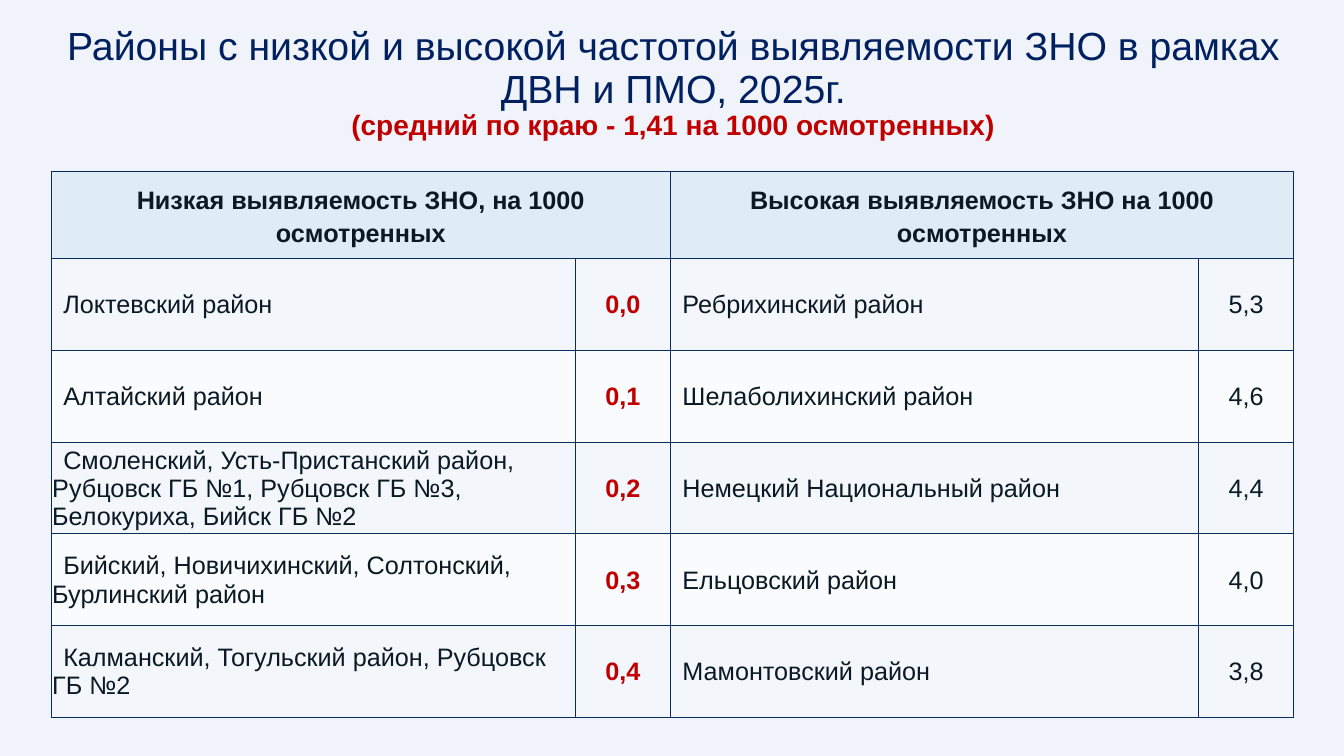
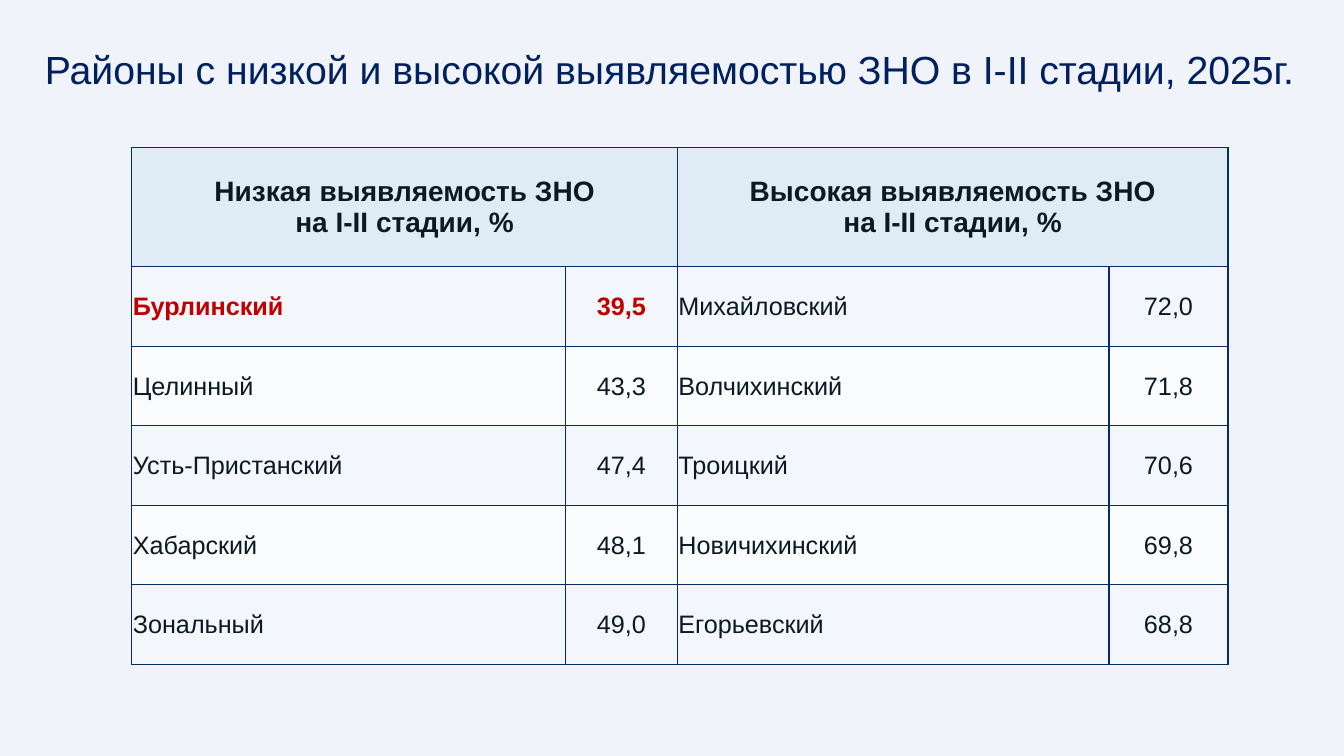
from dataclasses import dataclass

from lxml.etree import SubElement
from pptx import Presentation
from pptx.dml.color import RGBColor
from pptx.enum.text import MSO_ANCHOR as Anchor, PP_ALIGN as Align
from pptx.oxml.ns import qn
from pptx.util import Inches, Pt


@dataclass(frozen=True)
class Theme:
    font: str = "Arial"
    page: str = "F0F3F9"
    title: str = "002060"
    ink: str = "0B1924"
    accent: str = "C00000"
    border: str = "072C62"
    header: str = "DFEBF5"
    bands: tuple = ("F3F7FB", "F9FBFD")
    title_size: int = 28
    large: int = 20
    body: int = 18


THEME = Theme()
WIDTH, HEIGHT = Inches(13.33), Inches(7.5)
COLUMNS, ROWS = 160, 90


def on_grid(box):
    left, top, width, height = box
    column, row = WIDTH / COLUMNS, HEIGHT / ROWS
    return [round(n) for n in (left * column, top * row, width * column, height * row)]


def write(frame, text, size=THEME.body, color=THEME.ink, bold=False,
          align=Align.LEFT, spacing=1.0, indent=0):
    for line in text.split("\n"):
        last = frame.paragraphs[-1]
        paragraph = frame.add_paragraph() if last.runs else last
        paragraph.alignment = align
        paragraph.line_spacing = spacing
        if indent:
            properties = paragraph._p.get_or_add_pPr()
            properties.set("marL", "0")
            properties.set("indent", str(Inches(indent)))
        run = paragraph.add_run()
        run.text = line
        run.font.name = THEME.font
        run.font.size = Pt(size)
        run.font.bold = bold
        run.font.color.rgb = RGBColor.from_string(color)


def add_title(slide, box, heading, note=None):
    frame = slide.shapes.add_textbox(*on_grid(box)).text_frame
    frame.word_wrap = True
    frame.vertical_anchor = Anchor.MIDDLE
    write(frame, heading, size=THEME.title_size, color=THEME.title,
          align=Align.CENTER, spacing=0.9)
    if note:
        write(frame, note, size=THEME.large, color=THEME.accent, bold=True,
              align=Align.CENTER, spacing=0.9)


def style_cell(cell, fill, margins):
    properties = cell._tc.get_or_add_tcPr()
    for side in ("lnL", "lnR", "lnT", "lnB"):
        edge = SubElement(properties, qn(f"a:{side}"), w=str(Pt(1)))
        paint = SubElement(edge, qn("a:solidFill"))
        SubElement(paint, qn("a:srgbClr"), val=THEME.border)
    cell.fill.solid()
    cell.fill.fore_color.rgb = RGBColor.from_string(fill)
    cell.vertical_anchor = Anchor.MIDDLE
    cell.margin_left, cell.margin_top, cell.margin_right, cell.margin_bottom = map(
        Inches, margins)


def add_comparison(slide, box, widths, header_share, headers, districts, accents,
                   header_size=THEME.body, header_spacing=1.0, indent=0):
    left, top, width, height = on_grid(box)
    table = slide.shapes.add_table(
        len(districts) + 1, len(widths), left, top, width, height).table
    table.first_row = table.horz_banding = False
    for column, share in zip(table.columns, widths):
        column.width = round(width * share / sum(widths))
    header_height = round(height * header_share)
    for number, row in enumerate(table.rows):
        row.height = (round((height - header_height) / len(districts))
                      if number else header_height)
        for cell in row.cells:
            fill = THEME.bands[(number - 1) % 2] if number else THEME.header
            style_cell(cell, fill, (0.01, 0.01, 0.01, 0) if number else (0.04, 0, 0.04, 0))
    for half, header in enumerate(headers):
        cell = table.cell(0, half * 2)
        cell.merge(table.cell(0, half * 2 + 1))
        write(cell.text_frame, header, size=header_size, bold=True,
              align=Align.CENTER, spacing=header_spacing)
    for number, values in enumerate(districts, 1):
        for place, value in enumerate(values):
            is_rate = place % 2 == 1
            marked = (number, place) in accents
            write(table.cell(number, place).text_frame, value, bold=marked,
                  color=THEME.accent if marked else THEME.ink,
                  align=Align.CENTER if is_rate else Align.LEFT,
                  indent=0 if is_rate else indent)


def add_frequency_slide(deck):
    slide = deck.slides.add_slide(deck.slide_layouts[6])
    add_title(slide, (1.7, 2.5, 156.9, 15.1),
              "Районы с низкой и высокой частотой выявляемости ЗНО в рамках ДВН и ПМО, 2025г.",
              "(средний по краю - 1,41 на 1000 осмотренных)")
    districts = [
        ("Локтевский район", "0,0", "Ребрихинский район", "5,3"),
        ("Алтайский район", "0,1", "Шелаболихинский район", "4,6"),
        ("Смоленский, Усть-Пристанский район, Рубцовск ГБ №1, Рубцовск ГБ №3, "
         "Белокуриха, Бийск ГБ №2", "0,2", "Немецкий Национальный район", "4,4"),
        ("Бийский, Новичихинский, Солтонский, Бурлинский район", "0,3",
         "Ельцовский район", "4,0"),
        ("Калманский, Тогульский район, Рубцовск ГБ №2", "0,4",
         "Мамонтовский район", "3,8"),
    ]
    add_comparison(slide, (6.1, 20.4, 147.9, 65), (5.2, 0.94, 5.24, 0.94), 0.16,
                   ("Низкая выявляемость ЗНО, на 1000 осмотренных",
                    "Высокая выявляемость ЗНО на 1000 осмотренных"),
                   districts, {(number, 1) for number in range(1, 6)},
                   header_spacing=1.15, indent=0.11)


def add_stage_slide(deck):
    slide = deck.slides.add_slide(deck.slide_layouts[6])
    add_title(slide, (0, 5.3, 159.4, 6.6),
              "Районы с низкой и высокой выявляемостью ЗНО в I-II стадии, 2025г.")
    districts = [
        ("Бурлинский", "39,5", "Михайловский", "72,0"),
        ("Целинный", "43,3", "Волчихинский", "71,8"),
        ("Усть-Пристанский", "47,4", "Троицкий", "70,6"),
        ("Хабарский", "48,1", "Новичихинский", "69,8"),
        ("Зональный", "49,0", "Егорьевский", "68,8"),
    ]
    add_comparison(slide, (15.7, 17.6, 130.5, 61.5), (4.3, 1.11, 4.28, 1.18), 0.23,
                   ("Низкая выявляемость ЗНО\nна I-II стадии, %",
                    "Высокая выявляемость ЗНО\nна I-II стадии, %"),
                   districts, {(1, 0), (1, 1)}, header_size=THEME.large)


def main():
    deck = Presentation()
    deck.slide_width, deck.slide_height = WIDTH, HEIGHT
    backdrop = deck.slide_master.background.fill
    backdrop.solid()
    backdrop.fore_color.rgb = RGBColor.from_string(THEME.page)
    add_frequency_slide(deck)
    add_stage_slide(deck)
    deck.save("out.pptx")


if __name__ == "__main__":
    main()
